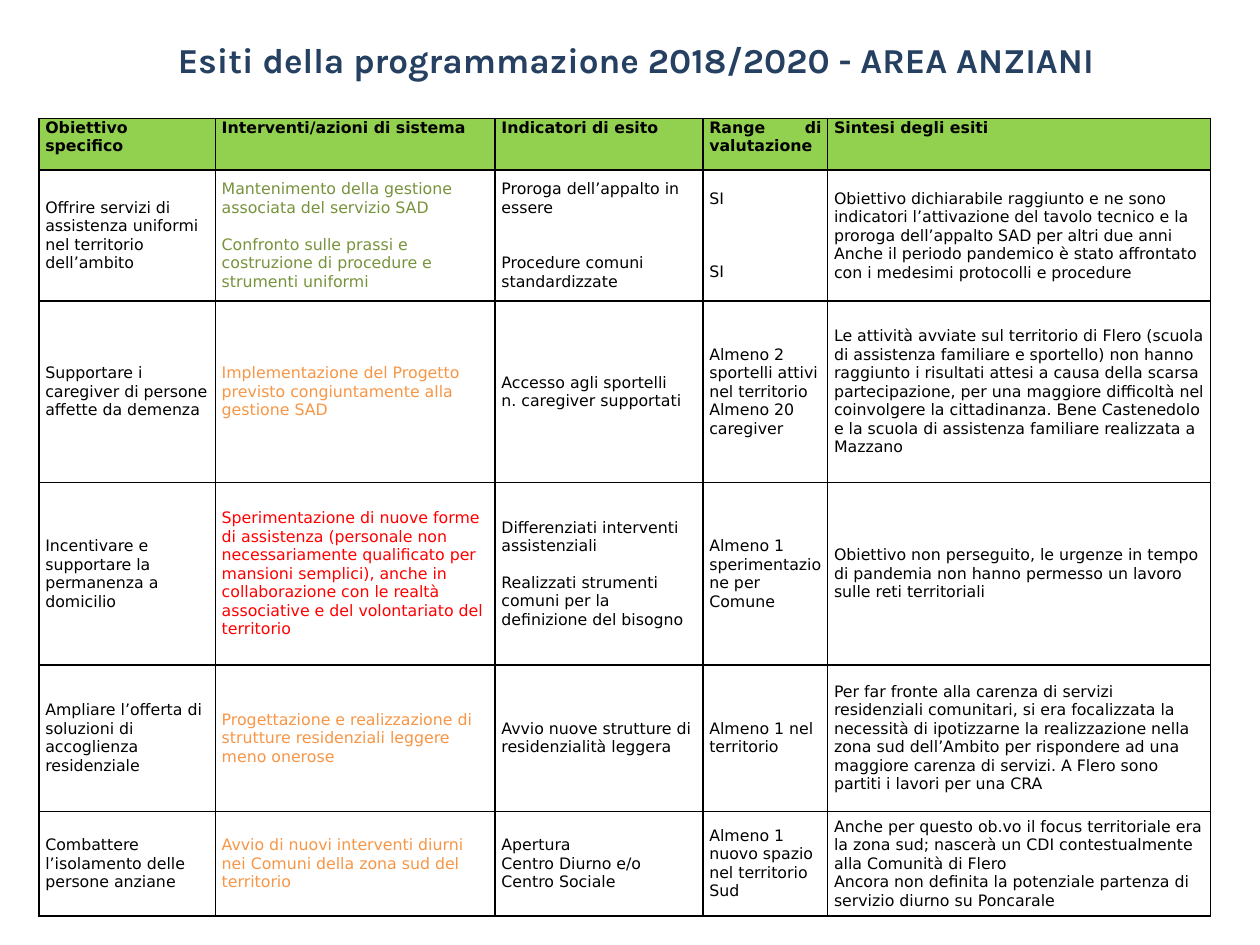
from lxml import etree
from pptx import Presentation
from pptx.dml.color import RGBColor
from pptx.enum import text as t
from pptx.oxml import ns
from pptx.util import Inches, Pt

THEME = {
    "title_font": "Karla", "body_font": "DejaVu Sans",
    "title_size": 20, "body_size": 9, "line_pitch": 10.5, "border": 1,
    "title": "254061", "ink": "000000", "header": "92D050", "paper": "FFFFFF",
    "reached": "77933C", "partial": "F79646", "missed": "FF0000",
}

TITLE = "Esiti della programmazione 2018/2020 - AREA ANZIANI"
COLUMN_WIDTHS = [1.4, 2.22, 1.65, 0.99, 3.04]
ROW_HEIGHTS = [0.41, 1.04, 1.44, 1.45, 1.16, 0.83]
ACTION_COLUMN = 1

HEADINGS = [
    ["Obiettivo", "specifico"],
    ["Interventi/azioni di sistema"],
    ["Indicatori di esito"],
    ["Range di valutazione"],
    ["Sintesi degli esiti"],
]

# Each goal: outcome, then its cells as paragraphs; (n, text) leaves n lines free above.
GOALS = [
    ("reached", [
        ["Offrire servizi di assistenza uniformi nel territorio dell’ambito"],
        ["Mantenimento della gestione associata del servizio SAD",
         (1, "Confronto sulle prassi e costruzione di procedure e strumenti uniformi")],
        ["Proroga dell’appalto in essere", (2, "Procedure comuni standardizzate")],
        ["SI", (3, "SI")],
        ["Obiettivo dichiarabile raggiunto e ne sono indicatori l’attivazione del tavolo "
         "tecnico e la proroga dell’appalto SAD per altri due anni",
         "Anche il periodo pandemico è stato affrontato con i medesimi protocolli e procedure"],
    ]),
    ("partial", [
        ["Supportare i caregiver di persone affette da demenza"],
        ["Implementazione del Progetto previsto congiuntamente alla gestione SAD"],
        ["Accesso agli sportelli", "n. caregiver supportati"],
        ["Almeno 2 sportelli attivi nel territorio", "Almeno 20 caregiver"],
        ["Le attività avviate sul territorio di Flero (scuola di assistenza familiare e "
         "sportello) non hanno raggiunto i risultati attesi a causa della scarsa "
         "partecipazione, per una maggiore difficoltà nel coinvolgere la cittadinanza. "
         "Bene Castenedolo e la scuola di assistenza familiare realizzata a Mazzano"],
    ]),
    ("missed", [
        ["Incentivare e supportare la permanenza a domicilio"],
        ["Sperimentazione di nuove forme di assistenza (personale non necessariamente "
         "qualificato per mansioni semplici), anche in collaborazione con le realtà "
         "associative e del volontariato del territorio"],
        ["Differenziati interventi assistenziali",
         (1, "Realizzati strumenti comuni per la definizione del bisogno")],
        ["Almeno 1 sperimentazione per Comune"],
        ["Obiettivo non perseguito, le urgenze in tempo di pandemia non hanno permesso "
         "un lavoro sulle reti territoriali"],
    ]),
    ("partial", [
        ["Ampliare l’offerta di soluzioni di accoglienza residenziale"],
        ["Progettazione e realizzazione di strutture residenziali leggere meno onerose"],
        ["Avvio nuove strutture di residenzialità leggera"],
        ["Almeno 1 nel territorio"],
        ["Per far fronte alla carenza di servizi residenziali comunitari, si era "
         "focalizzata la necessità di ipotizzarne la realizzazione nella zona sud "
         "dell’Ambito per rispondere ad una maggiore carenza di servizi. A Flero sono "
         "partiti i lavori per una CRA"],
    ]),
    ("partial", [
        ["Combattere l’isolamento delle persone anziane"],
        ["Avvio di nuovi interventi diurni nei Comuni della zona sud del territorio"],
        ["Apertura", "Centro Diurno e/o", "Centro Sociale"],
        ["Almeno 1 nuovo spazio nel territorio Sud"],
        ["Anche per questo ob.vo il focus territoriale era la zona sud; nascerà un CDI "
         "contestualmente alla Comunità di Flero",
         "Ancora non definita la potenziale partenza di servizio diurno su Poncarale"],
    ]),
]


def add_run(paragraph, words, role, color, bold):
    run = paragraph.add_run()
    run.text = words
    run.font.name = THEME[role + "_font"]
    run.font.size = Pt(THEME[role + "_size"])
    run.font.bold = bold
    run.font.color.rgb = RGBColor.from_string(THEME[color])


def draw_borders(cell):
    properties = cell._tc.get_or_add_tcPr()
    for side in ("lnL", "lnR", "lnT", "lnB"):
        line = etree.SubElement(properties, ns.qn("a:" + side), w=str(Pt(THEME["border"])))
        fill = etree.SubElement(line, ns.qn("a:solidFill"))
        etree.SubElement(fill, ns.qn("a:srgbClr"), val=THEME["ink"])


def fill_cell(cell, paragraphs, color="ink", heading=False):
    cell.margin_left = cell.margin_right = Inches(0.05)
    cell.margin_top = cell.margin_bottom = 0
    cell.vertical_anchor = t.MSO_ANCHOR.TOP if heading else t.MSO_ANCHOR.MIDDLE
    draw_borders(cell)
    cell.fill.solid()
    cell.fill.fore_color.rgb = RGBColor.from_string(THEME["header" if heading else "paper"])
    for i, entry in enumerate(paragraphs):
        gap, words = entry if isinstance(entry, tuple) else (0, entry)
        paragraph = cell.text_frame.add_paragraph() if i else cell.text_frame.paragraphs[0]
        paragraph.alignment = t.PP_ALIGN.JUSTIFY if heading else t.PP_ALIGN.LEFT
        if gap:
            paragraph.space_before = Pt(gap * THEME["line_pitch"])
        add_run(paragraph, words, "body", color, heading)


def add_title(slide):
    frame = slide.shapes.add_textbox(
        Inches(0.55), Inches(0.11), Inches(9), Inches(0.72)).text_frame
    frame.word_wrap = True
    frame.vertical_anchor = t.MSO_ANCHOR.MIDDLE
    frame.paragraphs[0].alignment = t.PP_ALIGN.CENTER
    add_run(frame.paragraphs[0], TITLE, "title", "title", True)


def add_outcomes(slide):
    outcomes = slide.shapes.add_table(
        len(ROW_HEIGHTS), len(COLUMN_WIDTHS), Inches(0.31), Inches(0.94),
        Inches(sum(COLUMN_WIDTHS)), Inches(sum(ROW_HEIGHTS))).table
    outcomes.first_row = outcomes.horz_banding = False
    for column, width in zip(outcomes.columns, COLUMN_WIDTHS):
        column.width = Inches(width)
    for row, height in zip(outcomes.rows, ROW_HEIGHTS):
        row.height = Inches(height)
    for c, heading in enumerate(HEADINGS):
        fill_cell(outcomes.cell(0, c), heading, heading=True)
    for r, (outcome, goal) in enumerate(GOALS, start=1):
        for c, paragraphs in enumerate(goal):
            color = outcome if c == ACTION_COLUMN else "ink"
            fill_cell(outcomes.cell(r, c), paragraphs, color)


def main():
    deck = Presentation()
    deck.slide_width, deck.slide_height = Inches(10), Inches(7.5)
    slide = deck.slides.add_slide(deck.slide_layouts[6])
    add_title(slide)
    add_outcomes(slide)
    deck.save("out.pptx")


if __name__ == "__main__":
    main()
